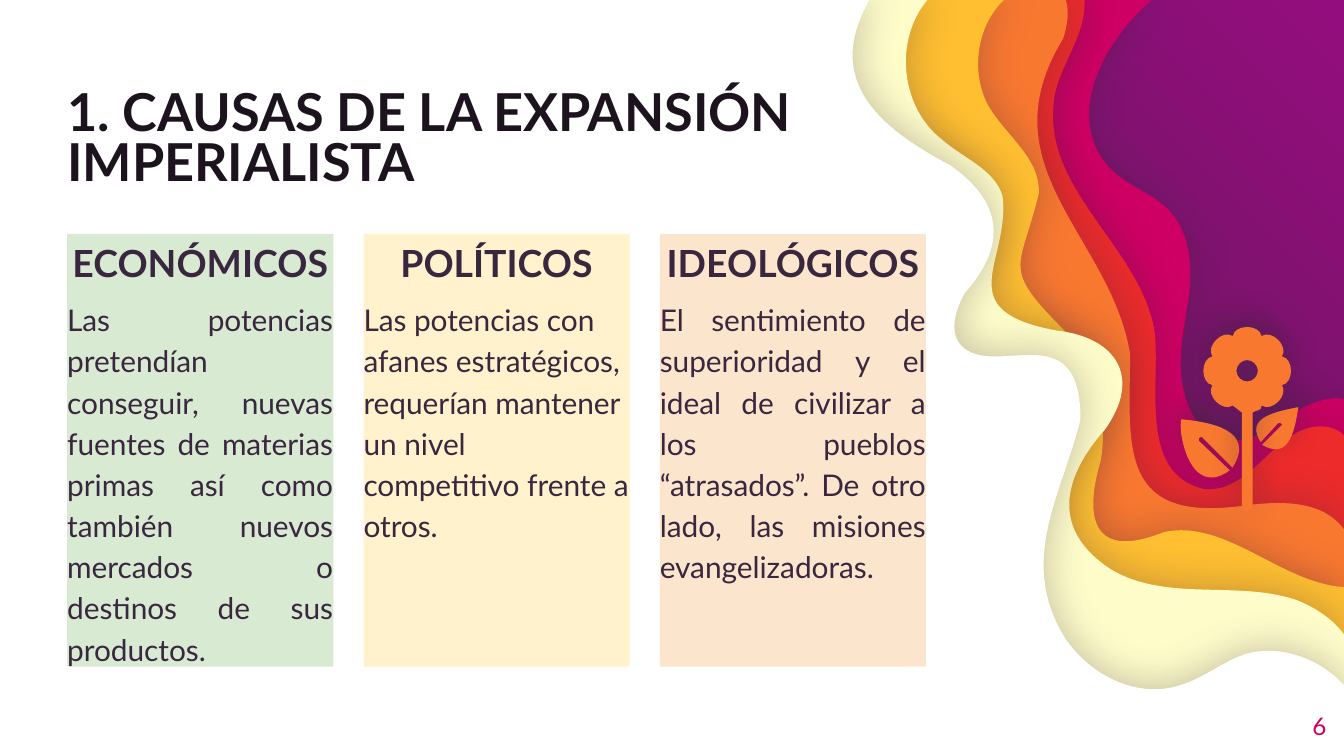
"""Build the slide on the causes of imperialist expansion."""
from dataclasses import dataclass
from math import cos, radians, sin

from pptx import Presentation
from pptx.dml.color import RGBColor
from pptx.enum.text import MSO_ANCHOR, MSO_AUTO_SIZE, PP_ALIGN
from pptx.oxml import parse_xml
from pptx.oxml.ns import nsdecls, qn
from pptx.util import Cm, Pt

LEFT, CENTER, RIGHT, JUSTIFY = PP_ALIGN.LEFT, PP_ALIGN.CENTER, PP_ALIGN.RIGHT, PP_ALIGN.JUSTIFY
TOP, MIDDLE, BOTTOM = MSO_ANCHOR.TOP, MSO_ANCHOR.MIDDLE, MSO_ANCHOR.BOTTOM
NO_FIT = MSO_AUTO_SIZE.NONE
COMPARISON_LAYOUT = 4
FONT, INK, ORANGE, MAGENTA = "Lato", "39273F", "F97830", "CE0063"
GRID = Cm(2.54)
PAGE_RIGHT, PAGE_BOTTOM = 10, 5.63
CARD_LEFT, CARD_TOP, CARD_WIDTH, CARD_HEIGHT, CARD_PITCH = 1.27, 4.42, 5.03, 8.18, 5.6


@dataclass
class Wave:
    """A coloured sheet whose edge runs from the right side to the top."""
    color: str
    start: float
    curves: list


@dataclass
class Card:
    """A column with a heading and an explanation."""
    heading: str
    body: str
    color: str
    align: PP_ALIGN


@dataclass
class Shadow:
    """An outer shadow in percent, points and degrees."""
    opacity: int
    blur: float
    distance: float
    angle: int


WAVE_SHADOW = Shadow(30, 22.5, 0.8, 0)
FLOWER_SHADOW = Shadow(50, 15.8, 6, 270)

WAVES = [
    Wave(MAGENTA, 2.97, [
        (9.88, 2.95, 9.74, 3, 9.63, 3.07), (9.25, 3.39, 8.87, 3.37, 8.79, 2.81),
        (8.77, 2.6, 8.82, 2.39, 8.85, 2.18), (8.87, 1.97, 8.85, 1.74, 8.72, 1.59),
        (8.59, 1.43, 8.37, 1.39, 8.24, 1.23), (7.91, 0.84, 8.24, 0.28, 8.57, 0)]),
    Wave("ED2B2B", 3.24, [
        (9.91, 3.15, 9.76, 3.16, 9.65, 3.22), (9.42, 3.34, 9.25, 3.67, 8.96, 3.64),
        (8.46, 3.53, 8.64, 2.84, 8.59, 2.46), (8.48, 1.82, 7.72, 1.4, 7.85, 0.7),
        (7.9, 0.46, 8.08, 0.26, 8.07, 0)]),
    Wave(ORANGE, 3.94, [
        (9.84, 3.72, 9.53, 3.73, 9.28, 3.76), (8.33, 3.9, 8.4, 3.36, 8.41, 2.64),
        (8.27, 1.76, 7.32, 1.25, 7.91, 0.29), (7.94, 0.2, 7.96, 0.09, 7.93, 0)]),
    Wave("FFBF31", 4.37, [
        (9.53, 4.34, 9.12, 3.86, 8.66, 3.96), (8.14, 4.17, 8.06, 3.87, 8.19, 3.43),
        (8.25, 3.09, 8.15, 2.72, 7.93, 2.47), (7.44, 1.98, 7.59, 2.02, 7.73, 1.44),
        (7.74, 1.17, 7.48, 1.01, 7.35, 0.78), (7.22, 0.53, 7.27, 0.19, 7.47, 0)]),
    Wave("FEFDCA", 4.72, [
        (9.91, 4.6, 9.77, 4.51, 9.63, 4.46), (9.19, 4.32, 8.68, 4.48, 8.27, 4.24),
        (7.82, 3.95, 7.9, 3.56, 8.22, 3.2), (8.5, 2.81, 8.31, 2.51, 7.86, 2.46),
        (7.05, 2.31, 7.52, 1.95, 7.46, 1.46), (7.4, 1.26, 7.17, 1.18, 7.01, 1.04),
        (6.7, 0.8, 6.65, 0.3, 6.9, 0)]),
    Wave("FFFFFF", 5.1, [
        (9.82, 4.9, 9.52, 4.79, 9.26, 4.87), (9.09, 4.93, 8.95, 5.05, 8.78, 5.1),
        (8.44, 5.21, 8.06, 5, 7.89, 4.69), (7.59, 4.13, 7.91, 3.66, 8.04, 3.12),
        (8.04, 2.32, 7.4, 2.83, 7.15, 2.57), (7.06, 2.47, 7.11, 2.3, 7.18, 2.18),
        (7.49, 1.83, 7.47, 1.51, 7.07, 1.23), (6.56, 0.96, 6.12, 0.61, 6.47, 0)]),
]

LEAVES = [
    [(9.66, 3.03), (9.45, 3.07, 9.27, 3.12, 9.38, 3.29), (9.51, 3.15), (9.53, 3.15),
     (9.54, 3.16), (9.39, 3.31), (9.58, 3.42, 9.63, 3.24, 9.66, 3.03)],
    [(8.79, 3.12), (8.76, 3.2, 8.85, 3.72, 9.15, 3.5), (8.92, 3.28), (8.92, 3.26),
     (8.94, 3.25), (9.17, 3.48), (9.35, 3.2, 9, 3.14, 8.79, 3.12)],
]

STEM = [(9.39, 3.06, 9.35, 3.05, 9.32, 3.07), (9.32, 3.77),
        (9.32, 3.82, 9.24, 3.82, 9.24, 3.77), (9.24, 3.07)]

CARDS = [
    Card("ECONÓMICOS", "Las potencias pretendían conseguir, nuevas fuentes de materias primas "
         "así como también nuevos mercados o destinos de sus productos.", "D9EAD3", JUSTIFY),
    Card("POLÍTICOS", "Las potencias con afanes estratégicos, requerían mantener un nivel "
         "competitivo frente a otros.", "FFF2CC", LEFT),
    Card("IDEOLÓGICOS", "El sentimiento de superioridad y el ideal de civilizar a los pueblos "
         "“atrasados”. De otro lado, las misiones evangelizadoras.", "FCE5CD", JUSTIFY),
]


def paint(fill, color: str) -> None:
    """Give a fill a solid hex colour."""
    fill.solid()
    fill.fore_color.rgb = RGBColor.from_string(color)


def scallops(radius: float, reach: float, first: float, turn: float, swing: float,
             count: int) -> list:
    """Return a start point and equal curves around the middle of the blossom."""
    def polar(distance: float, angle: float) -> tuple:
        """Return a point around the middle of the blossom."""
        return (9.28 + distance * cos(radians(angle)), 2.76 + distance * sin(radians(angle)))

    steps = [polar(radius, first)]
    for index in range(count):
        begin = first + index * turn
        end = begin + turn
        steps.append(polar(reach, begin + swing) + polar(reach, end - swing) + polar(radius, end))
    return steps


def draw_outline(page, contours: list, color: str, shadow: Shadow):
    """Draw closed contours of lines and cubic curves as one shadowed shape."""
    scaled = [[tuple(round(value * GRID) for value in step) for step in contour]
              for contour in contours]
    builder = page.shapes.build_freeform(*scaled[0][0])
    for index, contour in enumerate(scaled):
        if index:
            builder.move_to(*contour[0])
        builder.add_line_segments([step[-2:] for step in contour[1:]], close=True)
    shape = builder.convert_to_shape()
    steps = [step for contour in scaled for step in contour[1:]]
    for line, step in zip(list(shape.element.iter(qn("a:lnTo"))), steps):
        if len(step) == 6:
            points = "".join(f'<a:pt x="{x - shape.left}" y="{y - shape.top}"/>'
                             for x, y in zip(step[0::2], step[1::2]))
            line.getparent().replace(line, parse_xml(
                f'<a:cubicBezTo {nsdecls("a")}>{points}</a:cubicBezTo>'))
    paint(shape.fill, color)
    shape.line.fill.background()
    shape.shadow.inherit = False
    shape.element.spPr.find(qn("a:effectLst")).append(parse_xml(
        f'<a:outerShdw {nsdecls("a")} blurRad="{Pt(shadow.blur)}" dist="{Pt(shadow.distance)}" '
        f'dir="{shadow.angle * 60000}" algn="ctr" rotWithShape="0"><a:srgbClr val="{INK}">'
        f'<a:alpha val="{shadow.opacity * 1000}"/></a:srgbClr></a:outerShdw>'))
    return shape


def place(box, left: float, top: float, width: float, height: float, anchor: MSO_ANCHOR):
    """Position a text holder, clear its margins and return its text frame."""
    box.left, box.top, box.width, box.height = Cm(left), Cm(top), Cm(width), Cm(height)
    frame = box.text_frame
    frame.margin_left = frame.margin_right = frame.margin_top = frame.margin_bottom = 0
    frame.word_wrap, frame.auto_size, frame.vertical_anchor = True, NO_FIT, anchor
    return frame


def write(paragraph, text: str, *, size: float, color: str = INK, bold: bool = False,
          align: PP_ALIGN = LEFT, spacing: float = 1.0, before: float = 0) -> None:
    """Write one formatted paragraph without a bullet."""
    paragraph.alignment, paragraph.line_spacing = align, spacing
    paragraph.space_before, paragraph.space_after = Pt(before), Pt(0)
    properties = paragraph._p.get_or_add_pPr()
    properties.set("marL", "0")
    properties.set("indent", "0")
    properties.append(parse_xml(f'<a:buNone {nsdecls("a")}/>'))
    span = paragraph.add_run()
    span.text = text
    span.font.name, span.font.size, span.font.bold = FONT, Pt(size), bold
    paint(span.font.fill, color)


def draw_background(page) -> None:
    """Fill the page with a gradient that spreads from the top right corner."""
    page.background.fill.gradient()
    gradient = page.element.find(".//" + qn("a:gradFill"))
    stops = "".join(f'<a:gs pos="{position * 1000}"><a:srgbClr val="{color}"/></a:gs>'
                    for position, color in ((0, "940D7F"), (50, "5E1B53"), (100, "5E1B53")))
    gradient.getparent().replace(gradient, parse_xml(
        f'<a:gradFill {nsdecls("a")}><a:gsLst>{stops}</a:gsLst><a:path path="circle">'
        '<a:fillToRect l="100000" b="100000"/></a:path></a:gradFill>'))


def draw_card(box, card: Card, column: int) -> None:
    """Fill a body placeholder with a card in the given column."""
    frame = place(box, CARD_LEFT + column * CARD_PITCH, CARD_TOP, CARD_WIDTH, CARD_HEIGHT, TOP)
    paint(box.fill, card.color)
    write(frame.paragraphs[0], card.heading, size=20, bold=True, align=CENTER,
          spacing=1.15, before=6)
    write(frame.add_paragraph(), card.body, size=16, align=card.align, spacing=1.15, before=6)


def draw_flower(page) -> None:
    """Draw the leaves, then the blossom with its stem and open middle."""
    for leaf in LEAVES:
        draw_outline(page, [leaf], ORANGE, FLOWER_SHADOW)
    petals = scallops(0.28, 0.36, 112.5, 45, 8, 7)
    middle = scallops(0.08, 0.09, 0, -90, -29, 4)
    draw_outline(page, [petals + STEM, middle], ORANGE, FLOWER_SHADOW)


def main() -> None:
    """Build and save the deck."""
    deck = Presentation()
    deck.slide_width, deck.slide_height = Cm(25.4), Cm(14.29)
    page = deck.slides.add_slide(deck.slide_layouts[COMPARISON_LAYOUT])
    title, *bodies = page.placeholders
    draw_background(page)
    corners = [(0, 0), (0, PAGE_BOTTOM), (PAGE_RIGHT, PAGE_BOTTOM)]
    for wave in WAVES:
        edge = [(PAGE_RIGHT, wave.start), *wave.curves, *corners]
        sheet = draw_outline(page, [edge], wave.color, WAVE_SHADOW)
        title.element.addprevious(sheet.element)
    write(place(title, 1.27, 1.65, 14.48, 1.98, BOTTOM).paragraphs[0],
          "1. CAUSAS DE LA EXPANSIÓN IMPERIALISTA",
          size=28, color="1C131F", bold=True, spacing=0.8)
    for column, (box, card) in enumerate(zip(bodies, CARDS)):
        draw_card(box, card, column)
    for spare in bodies[len(CARDS):]:
        spare.element.getparent().remove(spare.element)
    number = page.shapes.add_textbox(0, 0, 0, 0)
    write(place(number, 23.55, 13.18, 1.52, 1.09, MIDDLE).paragraphs[0], "6",
          size=13, color=MAGENTA, align=RIGHT)
    draw_flower(page)
    deck.save("out.pptx")


if __name__ == "__main__":
    main()
